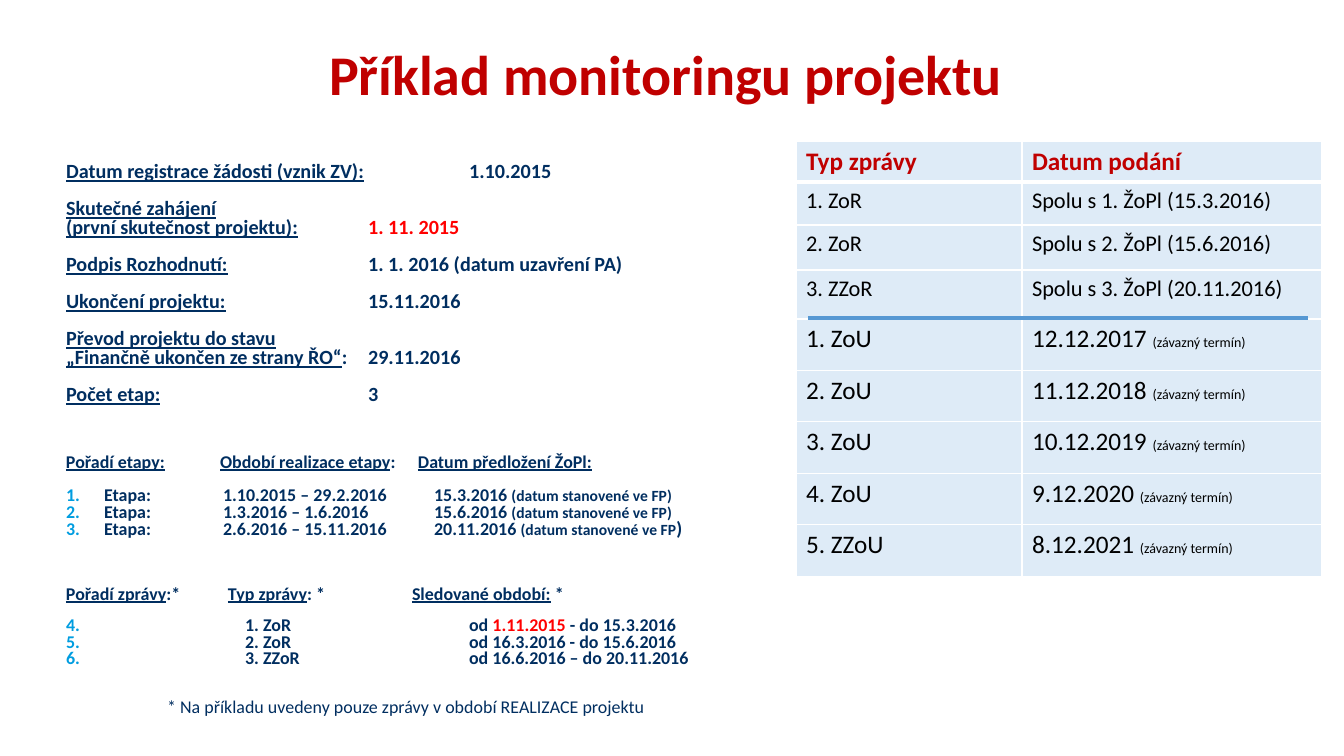
from lxml.etree import SubElement
from pptx import Presentation
from pptx.dml.color import RGBColor
from pptx.enum.shapes import MSO_CONNECTOR
from pptx.enum.text import MSO_ANCHOR, MSO_AUTO_SIZE, PP_ALIGN
from pptx.oxml import parse_xml
from pptx.oxml.ns import nsdecls, qn
from pptx.util import Emu, Pt

SCALE = 914400 / 100.8
NAVY, DARK_RED, RED, BLACK = "002E60", "C00000", "FF0000", "000000"
CYAN, PALE_BLUE, LINE_BLUE, WHITE = "009DE0", "DEEBF7", "5698D3", "FFFFFF"
LINE = 15  # height of a body line

# Formats of text spans
PLAIN = {"size": 14.4, "color": NAVY, "bold": True}
LABEL = PLAIN | {"underline": True}
WARNING = PLAIN | {"color": RED}
SMALL = PLAIN | {"size": 12.8}
HEADING = SMALL | {"underline": True}
SOURCE = PLAIN | {"size": 11.1}
FOOTNOTE = SMALL | {"bold": False}

# Tab stops of the columns
REGISTRATION_TABS, FACT_TABS = [403], [302]
STAGE_HEAD_TABS, STAGE_TABS = [154, 352], [38, 157, 368]
REPORT_HEAD_TABS, REPORT_TABS = [162, 346], [179, 403]

FACTS = [  # distance from the line above, tab stops, spans
    (0, REGISTRATION_TABS, [("Datum registrace žádosti (vznik ZV):", LABEL), ("\t1.10.2015", PLAIN)]),
    (37, [], [("Skutečné zahájení", LABEL)]),
    (19, FACT_TABS, [("(první skutečnost projektu):", LABEL), ("\t", PLAIN), ("1. 11. 2015", WARNING)]),
    (37, FACT_TABS, [("Podpis Rozhodnutí:", LABEL), ("\t1. 1. 2016 (datum uzavření PA)", PLAIN)]),
    (37, FACT_TABS, [("Ukončení projektu:", LABEL), ("\t15.11.2016", PLAIN)]),
    (37, [], [("Převod projektu do stavu", LABEL)]),
    (19, FACT_TABS, [("„Finančně ukončen ze strany ŘO“", LABEL), (":\t29.11.2016", PLAIN)]),
    (37, FACT_TABS, [("Počet etap:", LABEL), ("\t3", PLAIN)]),
]
STAGE_HEAD = [("Pořadí etapy:", HEADING), ("\t", SMALL), ("Období realizace etapy", HEADING),
              (":\t", SMALL), ("Datum předložení ŽoPl:", HEADING)]
STAGES = [
    (99, "1.10.2015 – 29.2.2016", "15.3.2016", SOURCE),
    (17, "1.3.2016 – 1.6.2016", "15.6.2016", SOURCE),
    (17, "2.6.2016 – 15.11.2016", "20.11.2016", PLAIN | {"size": 13.6}),
]
REPORT_HEAD = [("Pořadí zprávy", HEADING), (":*\t", SMALL), ("Typ zprávy", HEADING),
               (": *\t", SMALL), ("Sledované období:", HEADING), (" *", SMALL)]
REPORTS = [
    (96, [("\t1. ZoR\tod ", SMALL), ("1.11.2015", SMALL | {"color": RED}), (" - do 15.3.2016", SMALL)]),
    (17, [("\t2. ZoR\tod 16.3.2016 - do 15.6.2016", SMALL)]),
    (16, [("\t3. ZZoR\tod 16.6.2016 – do 20.11.2016", SMALL)]),
]
TABLE_ROWS = [  # height, report, date
    (41, "Typ zprávy", "Datum podání"),
    (43, "1. ZoR", "Spolu s 1. ŽoPl (15.3.2016)"),
    (45, "2. ZoR", "Spolu s 2. ŽoPl (15.6.2016)"),
    (49, "3. ZZoR", "Spolu s 3. ŽoPl (20.11.2016)"),
    (52, "1. ZoU", "12.12.2017 "),
    (51, "2. ZoU", "11.12.2018 "),
    (52, "3. ZoU", "10.12.2019 "),
    (51, "4. ZoU", "9.12.2020 "),
    (52, "5. ZZoU", "8.12.2021 "),
]
FIRST_BINDING_ROW = 4


def px(length):
    return Emu(round(length * SCALE))


def rgb(color):
    return RGBColor.from_string(color)


def set_values(target, values):
    for name, value in values.items():
        setattr(target, name, value)


def add_span(para, text, style):
    span = para.add_run()
    span.text = text
    values = style | {"name": "Calibri", "size": Pt(style["size"])}
    span.font.color.rgb = rgb(values.pop("color"))
    set_values(span.font, values)


def place(box, left, top, width, height):
    set_values(box, {"left": px(left), "top": px(top), "width": px(width), "height": px(height)})
    set_values(box.text_frame, {"word_wrap": True, "auto_size": MSO_AUTO_SIZE.NONE})


def format_line(para, pitch, tabs, spans, start=None, indent=None):
    """Fill one line; start is the first number of its numbered list."""
    props = para._p.get_or_add_pPr()
    if indent is not None:
        props.set("marL", str(px(indent)))
        props.set("indent", "0")
    if start:
        color = SubElement(props, qn("a:buClr"))
        SubElement(color, qn("a:srgbClr"), val=CYAN)
        SubElement(props, qn("a:buFont"), typeface="+mj-lt")
        SubElement(props, qn("a:buAutoNum"), type="arabicPeriod", startAt=str(start))
    else:
        SubElement(props, qn("a:buNone"))
    if tabs:
        props.set("defTabSz", str(px(tabs[0])))
        stops = SubElement(props, qn("a:tabLst"))
        for stop in tabs:
            SubElement(stops, qn("a:tab"), pos=str(px(stop)), algn="l")
    set_values(para, {"alignment": PP_ALIGN.LEFT, "line_spacing": px(LINE),
                      "space_before": px(max(pitch - LINE, 0)), "space_after": Pt(0)})
    for text, style in spans:
        add_span(para, text, style)


def add_body_line(frame, pitch, tabs, spans, start=None, indent=0):
    para = frame.add_paragraph() if pitch else frame.paragraphs[0]
    format_line(para, pitch, tabs, spans, start, indent)


def add_heading_row(page, top, tabs, spans):
    box = page.shapes.add_textbox(0, 0, 0, 0)
    place(box, 66, top, 660, 20)
    set_values(box.text_frame, {"margin_left": 0, "margin_right": 0, "margin_top": 0, "margin_bottom": 0})
    format_line(box.text_frame.paragraphs[0], 0, tabs, spans)


def fill_title(box):
    place(box, 67, 10, 1210, 126)
    box.text_frame.vertical_anchor = MSO_ANCHOR.MIDDLE
    para = box.text_frame.paragraphs[0]
    para.alignment = PP_ALIGN.CENTER
    add_span(para, "Příklad monitoringu projektu ", {"size": 40, "color": DARK_RED, "bold": True})


def fill_body(box):
    place(box, 56, 136, 1127, 612)
    frame = box.text_frame
    set_values(frame, {"vertical_anchor": MSO_ANCHOR.TOP, "margin_top": px(32)})
    for pitch, tabs, spans in FACTS:
        add_body_line(frame, pitch, tabs, spans)
    for pitch, period, date, ending in STAGES:
        spans = [(f"\tEtapa:\t{period}\t{date} ", SMALL), ("(datum stanovené ve FP", SOURCE), (")", ending)]
        add_body_line(frame, pitch, STAGE_TABS, spans, start=1)
    for pitch, spans in REPORTS:
        add_body_line(frame, pitch, REPORT_TABS, spans, start=4)
    note = "* Na příkladu uvedeny pouze zprávy v období REALIZACE projektu"
    add_body_line(frame, 49, [], [(note, FOOTNOTE)], indent=101)


def set_borders(cell, widths):
    props = cell._tc.get_or_add_tcPr()
    for index, (side, width) in enumerate(widths.items()):
        props.insert(index, parse_xml(
            f'<a:ln{side} {nsdecls("a")} w="{Pt(width)}"><a:solidFill>'
            f'<a:srgbClr val="{WHITE}"/></a:solidFill></a:ln{side}>'))


def add_report_table(page):
    table = page.shapes.add_table(len(TABLE_ROWS), 2, px(796), px(141), px(526), px(436)).table
    for column, width in zip(table.columns, (226, 300)):
        column.width = px(width)
    for row, (height, *texts) in enumerate(TABLE_ROWS):
        table.rows[row].height = px(height)
        header, binding = row == 0, row >= FIRST_BINDING_ROW
        style = {"size": 18 if header or binding else 16,
                 "color": DARK_RED if header else BLACK, "bold": header}
        for column, text in enumerate(texts):
            cell = table.cell(row, column)
            cell.fill.solid()
            cell.fill.fore_color.rgb = rgb(PALE_BLUE)
            set_borders(cell, {"L": 1, "R": 1, "T": 3 if row == 1 else 1, "B": 3 if header else 1})
            para = cell.text_frame.paragraphs[0]
            add_span(para, text, style)
            if binding and column == 1:
                add_span(para, "(závazný termín)", style | {"size": 10})


def add_divider(page, left, right, top):
    divider = page.shapes.add_connector(MSO_CONNECTOR.STRAIGHT, px(left), px(top), px(right), px(top))
    divider.line.color.rgb = rgb(LINE_BLUE)
    divider.line.width = Pt(2.25)
    SubElement(divider._element.spPr, qn("a:effectLst"))


def main():
    deck = Presentation()
    set_values(deck, {"slide_width": px(1344), "slide_height": px(756)})
    page = deck.slides.add_slide(deck.slide_layouts[1])
    fill_title(page.shapes.title)
    fill_body(page.placeholders[1])
    # Column headings above the two numbered lists
    add_heading_row(page, 457, STAGE_HEAD_TABS, STAGE_HEAD)
    add_heading_row(page, 589, REPORT_HEAD_TABS, REPORT_HEAD)
    add_report_table(page)
    # Divides reports of the project run from those of the binding period
    add_divider(page, 808, 1308, 318)
    deck.save("out.pptx")


if __name__ == "__main__":
    main()
